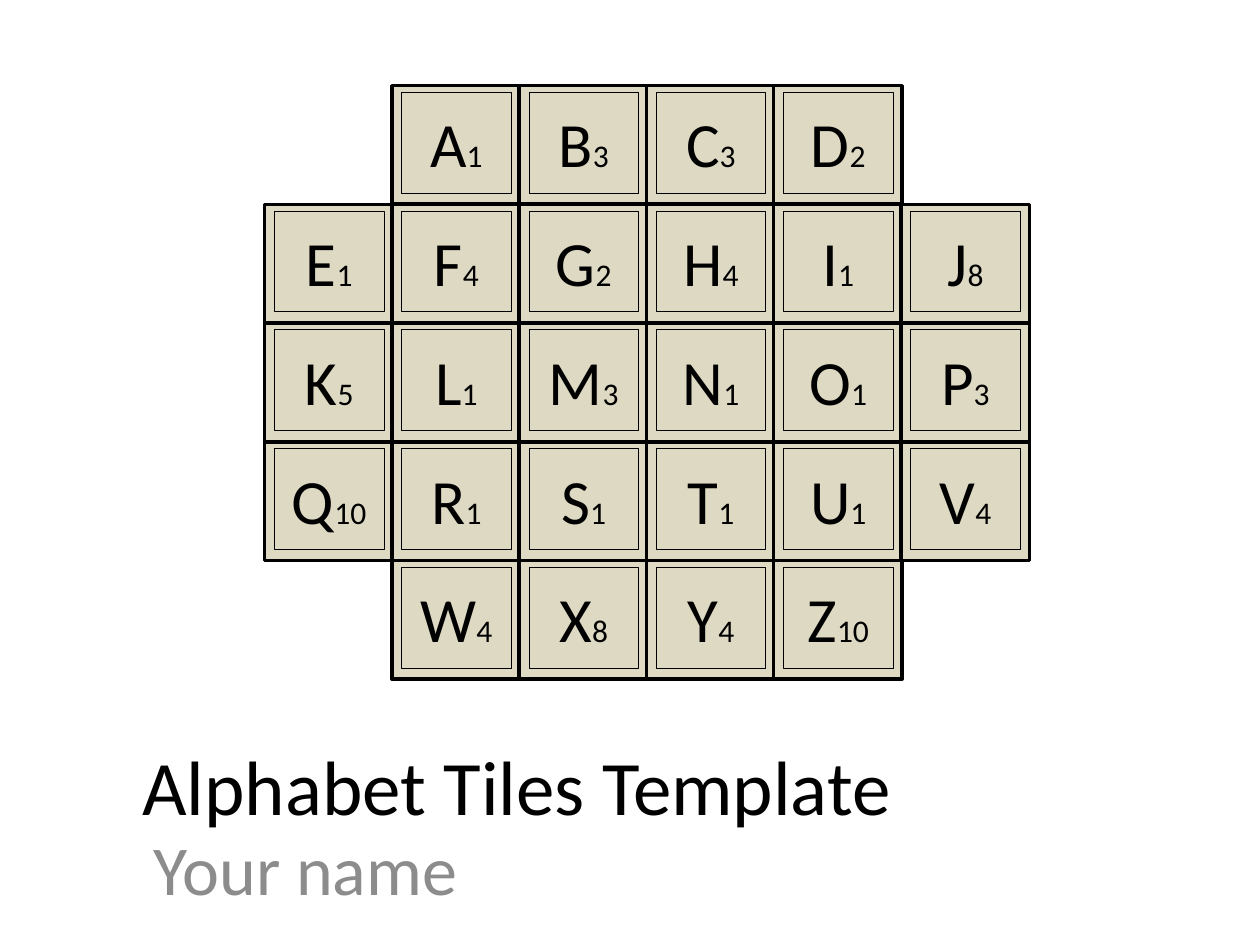
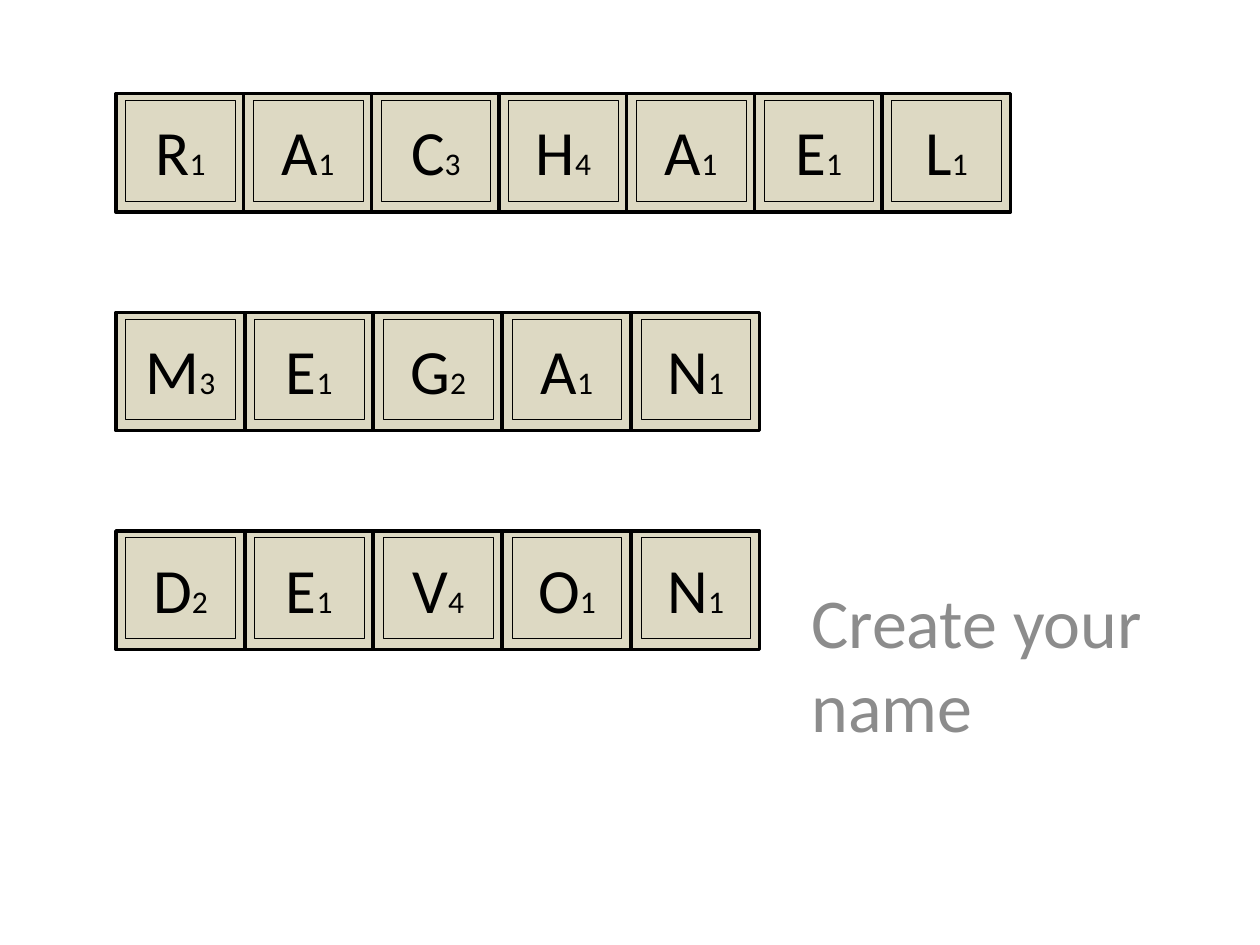
from collections import namedtuple
from pptx import Presentation
from pptx import util as u
from pptx.dml.color import RGBColor
from pptx.enum import shapes, text

FONT = "Calibri"
INK, TILE, GREY = "000000", "DDD9C3", "8C8C8C"
TILE_W, TILE_H = 1.02, 0.94
TITLE = {"size": u.Pt(44), "name": FONT}
SUBTITLE = {"size": u.Pt(40), "name": FONT}
LETTER = {"size": u.Pt(36), "name": FONT}
SCORE = {"size": u.Pt(18), "name": FONT}
POINTS = {1: "AEILNORSTU", 2: "DG", 3: "BCMP", 4: "FHVWY", 5: "K", 8: "JX", 10: "QZ"}
SCORES = {letter: pts for pts, letters in POINTS.items() for letter in letters}
ALPHABET = [" ABCD ", "EFGHIJ", "KLMNOP", "QRSTUV", " WXYZ "]


class Box(namedtuple("Box", "x y w h")):
    def share(self, x, y, w, h):
        return Box(self.x + self.w * x / 100, self.y + self.h * y / 100,
                   self.w * w / 100, self.h * h / 100)

    def emu(self):
        return [u.Inches(v) for v in self]


PAGE = Box(0, 0, 10, 7.5)


def rgb(value):
    return RGBColor.from_string(value)


def set_all(target, values):
    for name, value in values.items():
        setattr(target, name, value)


def add_run(p, words, style, color):
    r = p.add_run()
    r.text = str(words)
    set_all(r.font, style)
    r.font.color.rgb = rgb(color)


def add_rect(group, box, line_width):
    sp = group.shapes.add_shape(shapes.MSO_SHAPE.RECTANGLE, *box.emu())
    sp.shadow.inherit = False
    sp.fill.solid()
    sp.fill.fore_color.rgb = rgb(TILE)
    sp.line.color.rgb = rgb(INK)
    sp.line.width = u.Pt(line_width)
    return sp


def add_tile(s, box, letter):
    group = s.shapes.add_group_shape()
    add_rect(group, box, 2)
    tf = add_rect(group, box.share(7.6, 5.5, 85.3, 85.1), 0.25).text_frame
    set_all(tf, {"word_wrap": True, "vertical_anchor": text.MSO_ANCHOR.MIDDLE})
    p = tf.paragraphs[0]
    p.alignment = text.PP_ALIGN.CENTER
    add_run(p, letter, LETTER, INK)
    add_run(p, SCORES[letter], SCORE, INK)


def add_tile_row(s, box, letters):
    pitch = (box.w - TILE_W) / (len(letters) - 1)
    for col, letter in enumerate(letters):
        if letter != " ":
            add_tile(s, Box(box.x + col * pitch, box.y, TILE_W, TILE_H), letter)


def add_board(s, box, rows):
    pitch = (box.h - TILE_H) / (len(rows) - 1)
    for row, letters in enumerate(rows):
        add_tile_row(s, Box(box.x, box.y + row * pitch, box.w, TILE_H), letters)


def fill_placeholder(sp, box, words, style, color, anchor):
    set_all(sp, dict(zip(("left", "top", "width", "height"), box.emu())))
    tf = sp.text_frame
    set_all(tf, {"word_wrap": True, "auto_size": text.MSO_AUTO_SIZE.NONE,
                 "vertical_anchor": anchor})
    p = tf.paragraphs[0]
    p.alignment = text.PP_ALIGN.LEFT
    add_run(p, words, style, color)


def add_subtitle(s, box, words):
    fill_placeholder(s.placeholders[1], box, words, SUBTITLE, GREY, text.MSO_ANCHOR.TOP)


def alphabet_slide(prs, page):
    s = prs.slides.add_slide(prs.slide_layouts[0])
    fill_placeholder(s.shapes.title, page.share(10.3, 72.27, 85, 21.47),
                     "Alphabet Tiles Template", TITLE, INK, text.MSO_ANCHOR.MIDDLE)
    add_subtitle(s, page.share(11.2, 86.67, 51, 25.6), "Your name")
    add_board(s, page.share(21, 9.07, 60.7, 62.8), ALPHABET)


def names_slide(prs, page):
    s = prs.slides.add_slide(prs.slide_layouts[0])
    title = s.shapes.title.element
    title.getparent().remove(title)
    for row, (name, width) in enumerate([("RACHAEL", 71), ("MEGAN", 51.1), ("DEVON", 51.1)]):
        add_tile_row(s, page.share(9.2, 9.9 + 23.15 * row, width, 12.53), name)
    add_subtitle(s, page.share(63.4, 60.53, 33.1, 25.6), "Create your name")


def main():
    prs = Presentation()
    prs.slide_width, prs.slide_height = PAGE.emu()[2:]
    alphabet_slide(prs, PAGE)
    names_slide(prs, PAGE)
    prs.save("out.pptx")


if __name__ == "__main__":
    main()
